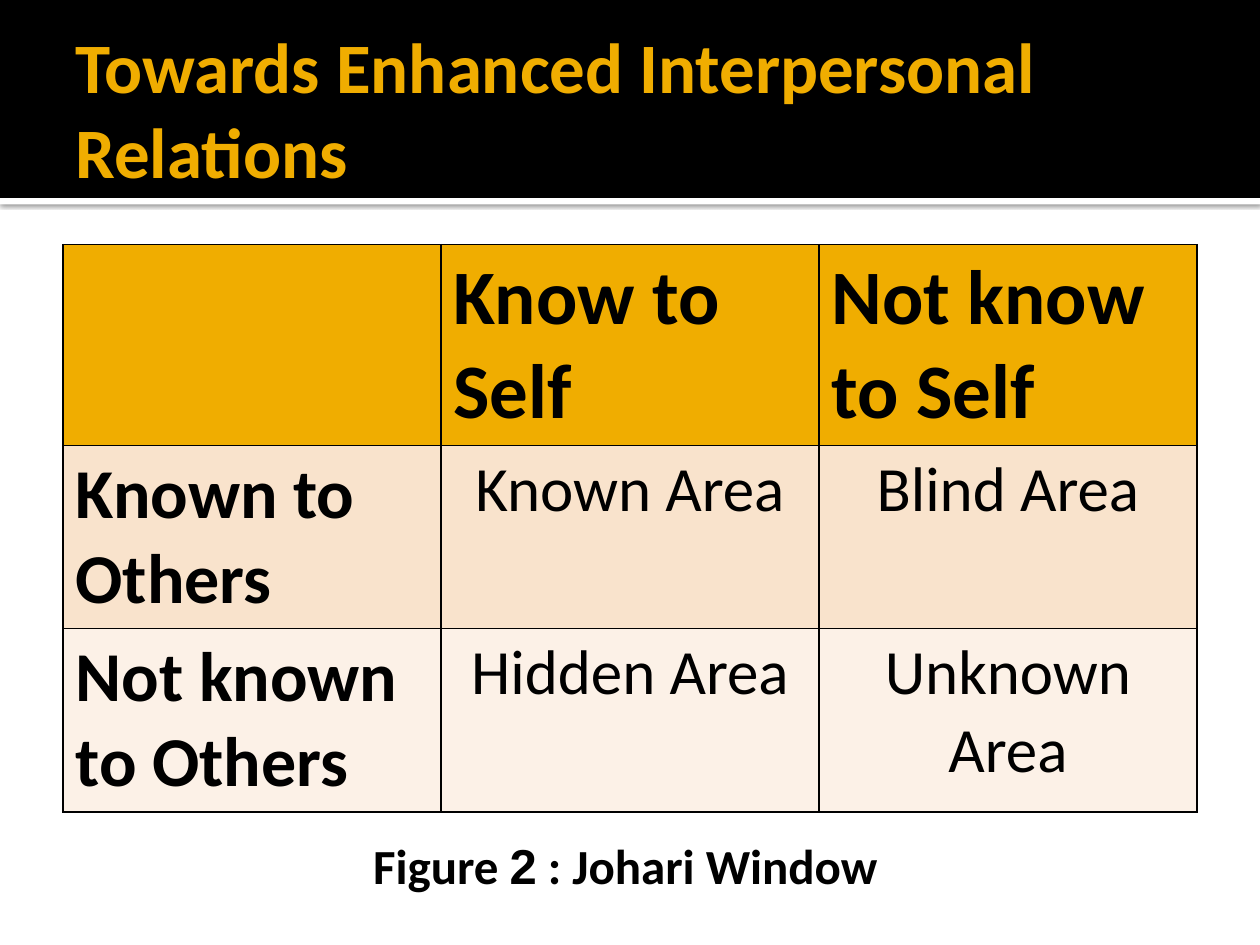
from lxml.etree import SubElement
from pptx import Presentation
from pptx.dml.color import RGBColor
from pptx.enum.shapes import MSO_SHAPE as Preset
from pptx.enum.text import MSO_ANCHOR as Anchor, MSO_AUTO_SIZE as AutoSize, PP_ALIGN as Align
from pptx.oxml.ns import qn
from pptx.util import Cm, Pt

BLACK, WHITE, AMBER = "000000", "FFFFFF", "F0AD00"
PEACH, CREAM = "F9E3CC", "FCF1E7"


def color(hex_string):
    return RGBColor.from_string(hex_string)


class SlideBuilder:
    def __init__(self, slide, font="Calibri"):
        self.slide = slide
        self.font = font

    def add_runs(self, paragraph, runs, size, hex_color=BLACK, bold=True, align=Align.LEFT):
        """Fill a paragraph from (text, font) pairs; a font of None means the slide's font."""
        paragraph.alignment = align
        for text, font in runs:
            run = paragraph.add_run()
            run.text = text
            run.font.name = font or self.font
            run.font.size = Pt(size)
            run.font.bold = bold
            run.font.color.rgb = color(hex_color)

    def bar(self, top, height, fill, shadow=False):
        """Draw a rectangle across the whole slide width."""
        shape = self.slide.shapes.add_shape(Preset.RECTANGLE, 0, Cm(top), Cm(25.4), Cm(height))
        shape.fill.solid()
        shape.fill.fore_color.rgb = color(fill)
        shape.line.fill.background()
        shape.shadow.inherit = False
        if shadow:
            effects = shape._element.spPr.find(qn("a:effectLst"))
            outer = SubElement(effects, qn("a:outerShdw"), blurRad=str(Pt(2.5)),
                               dist=str(Pt(0.8)), dir="5400000", rotWithShape="0")
            tint = SubElement(outer, qn("a:srgbClr"), val=BLACK)
            SubElement(tint, qn("a:alpha"), val="60000")

    def text(self, box, runs, size, anchor=Anchor.TOP, **style):
        shape = self.slide.shapes.add_textbox(*map(Cm, box))
        frame = shape.text_frame
        frame.word_wrap = True
        frame.auto_size = AutoSize.NONE
        frame.vertical_anchor = anchor
        self.add_runs(frame.paragraphs[0], runs, size, **style)

    def border(self, cell):
        properties = cell._tc.get_or_add_tcPr()
        for side in ("lnL", "lnR", "lnT", "lnB"):
            line = SubElement(properties, qn(f"a:{side}"), w=str(Pt(1)))
            fill = SubElement(line, qn("a:solidFill"))
            SubElement(fill, qn("a:srgbClr"), val=BLACK)

    def table(self, left, top, column_width, row_heights, rows, fills):
        """Draw a grid whose first row and first column are headings."""
        columns = len(rows[0])
        table = self.slide.shapes.add_table(
            len(rows), columns, Cm(left), Cm(top),
            Cm(column_width * columns), Cm(sum(row_heights))).table
        for column in table.columns:
            column.width = Cm(column_width)
        for i, texts in enumerate(rows):
            table.rows[i].height = Cm(row_heights[i])
            for j, text in enumerate(texts):
                cell = table.cell(i, j)
                self.border(cell)
                cell.fill.solid()
                cell.fill.fore_color.rgb = color(fills[i])
                if not text:
                    continue
                heading = i == 0 or j == 0
                size = 44 if i == 0 else 40 if j == 0 else 36
                self.add_runs(cell.text_frame.paragraphs[0], [(text, None)], size, bold=heading,
                              align=Align.LEFT if heading else Align.CENTER)


def main():
    presentation = Presentation()
    presentation.slide_width, presentation.slide_height = Cm(25.4), Cm(19.05)
    slide = presentation.slides.add_slide(presentation.slide_layouts[6])
    builder = SlideBuilder(slide)

    builder.bar(3.99, 0.13, WHITE, shadow=True)
    builder.bar(0, 3.99, BLACK)
    builder.text((1.27, 0.43, 22.86, 3.48), [("Towards Enhanced Interpersonal Relations", None)],
                 40.5, anchor=Anchor.MIDDLE, hex_color=AMBER)
    builder.table(1.27, 4.93, 7.62, (4.03, 3.69, 3.69), (
        ("", "Know to Self", "Not know to Self"),
        ("Known to Others", "Known Area", "Blind Area"),
        ("Not known to Others", "Hidden Area", "Unknown Area"),
    ), (AMBER, PEACH, CREAM))
    builder.text((3.18, 16.71, 18.85, 1.45),
                 [("Figure ", None), ("2", "Arial"), (" : Johari Window", None)],
                 28, align=Align.CENTER)
    presentation.save("out.pptx")


if __name__ == "__main__":
    main()
